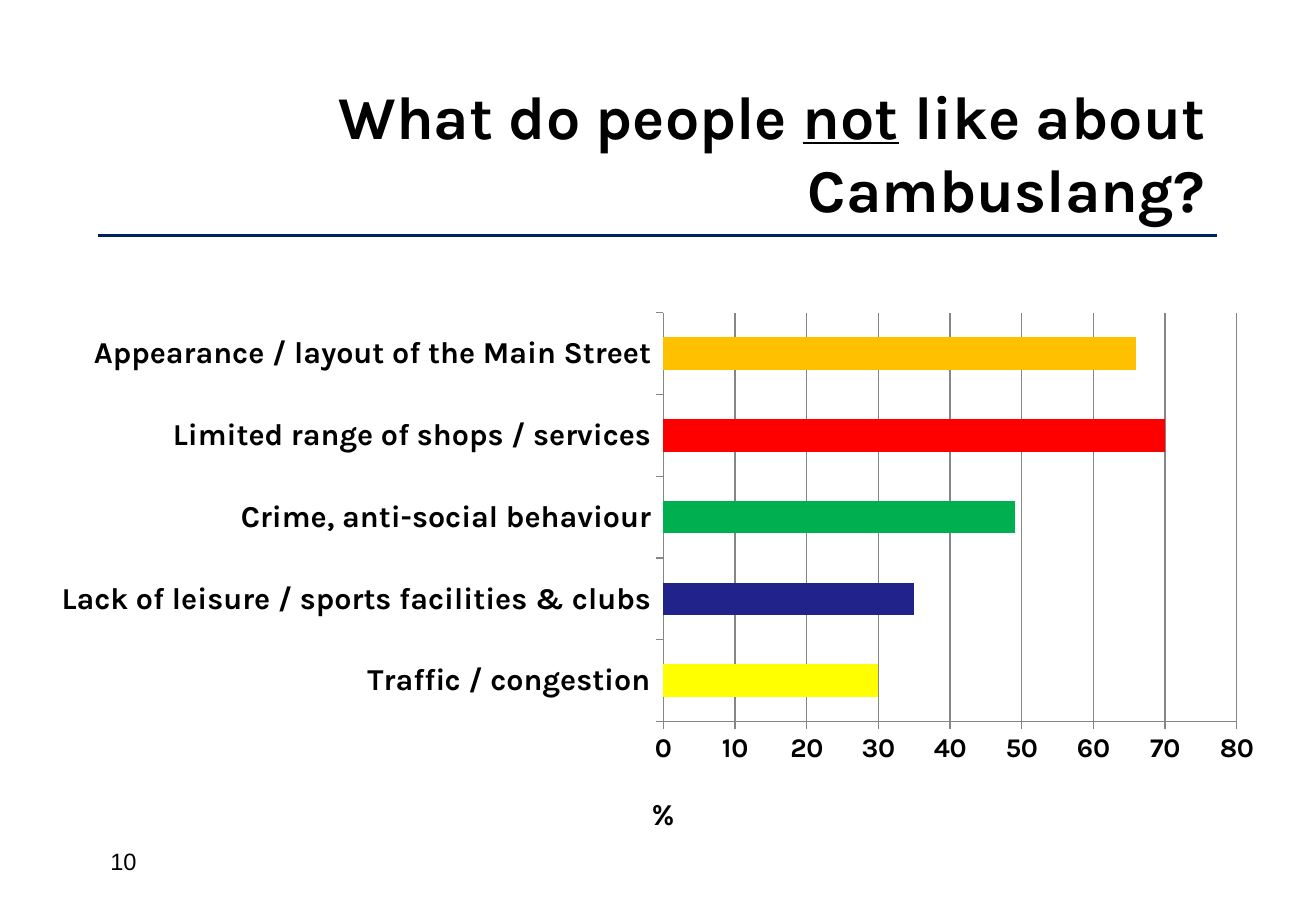
from dataclasses import dataclass
from typing import NamedTuple

from lxml.etree import SubElement
from pptx import Presentation
from pptx.chart.chart import Chart
from pptx.chart.data import CategoryChartData
from pptx.dml.color import RGBColor as Rgb
from pptx.enum.chart import XL_CHART_TYPE as ChartType, XL_TICK_MARK as TickMark
from pptx.enum.text import MSO_ANCHOR as Anchor, PP_ALIGN as Align
from pptx.oxml.ns import qn
from pptx.slide import Slide
from pptx.text.text import Font
from pptx.util import Pt


@dataclass(frozen=True)
class Theme:
    heading_font: str = "Karla"
    number_font: str = "Arial"
    text: str = "000000"
    rule: str = "002060"
    grid: str = "868686"
    title_size: int = 36
    label_size: int = 18
    scale_size: int = 16
    number_size: int = 14


class Box(NamedTuple):
    left: float
    top: float
    width: float
    height: float


class Run(NamedTuple):
    text: str
    underline: bool = False


class Dislike(NamedTuple):
    label: str
    percent: int
    color: str


THEME = Theme()
TITLE_BOX = Box(58.3, 41.8, 663.1, 95.8)
NUMBER_BOX = Box(58.3, 498.2, 64.8, 23.8)
CHART_BOX = Box(21.6, 179.3, 737.3, 324)
RULE_TOP = 139.7

TITLE = [Run("What do people "), Run("not", True), Run(" like about Cambuslang?")]
DISLIKES = [
    Dislike("Traffic / congestion", 30, "FFFF00"),
    Dislike("Lack of leisure / sports facilities & clubs", 35, "22228B"),
    Dislike("Crime, anti-social behaviour", 49, "00B050"),
    Dislike("Limited range of shops / services", 70, "FF0000"),
    Dislike("Appearance / layout of the Main Street", 66, "FFC000"),
]


def style_font(font: Font, name: str, size: int, bold: bool) -> None:
    font.name = name
    font.size = Pt(size)
    font.bold = bold
    font.color.rgb = Rgb.from_string(THEME.text)


def add_text(slide: Slide, box: Box, runs: list[Run], name: str, size: int,
             bold: bool, align: Align, anchor: Anchor) -> None:
    frame = slide.shapes.add_textbox(*map(Pt, box)).text_frame
    frame.word_wrap = True
    frame.vertical_anchor = anchor
    paragraph = frame.paragraphs[0]
    paragraph.alignment = align
    for item in runs:
        run = paragraph.add_run()
        run.text = item.text
        style_font(run.font, name, size, bold)
        if item.underline:
            run.font.underline = True


def add_rule(slide: Slide) -> None:
    right = TITLE_BOX.left + TITLE_BOX.width
    line = slide.shapes.add_connector(
        1, Pt(TITLE_BOX.left), Pt(RULE_TOP), Pt(right), Pt(RULE_TOP))
    line.line.color.rgb = Rgb.from_string(THEME.rule)
    line.line.width = Pt(2)
    SubElement(line._element.spPr, qn("a:effectLst"))


def place(element, index: int, **fractions: float) -> None:
    """Fix a chart part at fractions of the chart area."""
    for old in element.findall(qn("c:layout")):
        element.remove(old)
    layout = SubElement(element, qn("c:layout"))
    element.insert(index, layout)
    manual = SubElement(layout, qn("c:manualLayout"))
    settings = {"xMode": "edge", "yMode": "edge", **fractions}
    if "w" in fractions:
        settings = {"layoutTarget": "inner", **settings}
    for key, value in settings.items():
        SubElement(manual, qn(f"c:{key}")).set("val", str(value))


def style_axes(chart: Chart) -> None:
    grey = Rgb.from_string(THEME.grid)
    sizes = ((chart.category_axis, THEME.label_size), (chart.value_axis, THEME.scale_size))
    for axis, size in sizes:
        style_font(axis.tick_labels.font, THEME.heading_font, size, True)
        axis.major_tick_mark = TickMark.OUTSIDE
        axis.minor_tick_mark = TickMark.NONE
        axis.format.line.color.rgb = grey
        axis.format.line.width = Pt(0.75)

    scale = chart.value_axis
    scale.minimum_scale, scale.maximum_scale, scale.major_unit = 0, 80, 10
    scale.has_major_gridlines = True
    scale.major_gridlines.format.line.color.rgb = grey
    scale.major_gridlines.format.line.width = Pt(0.75)
    run = scale.axis_title.text_frame.paragraphs[0].add_run()
    run.text = "%"
    style_font(run.font, THEME.heading_font, THEME.label_size, True)
    place(scale.axis_title._element, 1, x=0.49, y=0.89)


def add_dislikes_chart(slide: Slide) -> None:
    data = CategoryChartData(number_format="0")
    data.categories = [item.label for item in DISLIKES]
    data.add_series("Series 1", [item.percent for item in DISLIKES])
    chart = slide.shapes.add_chart(
        ChartType.BAR_CLUSTERED, *map(Pt, CHART_BOX), data).chart
    chart.has_legend = False
    chart.has_title = False
    style_font(chart.font, THEME.heading_font, THEME.label_size, False)
    style_axes(chart)
    place(chart._chartSpace.chart.plotArea, 0, x=0.504, y=0.019, w=0.461, h=0.748)

    # One colour per bar
    plot = chart.plots[0]
    plot.gap_width = 150
    plot.vary_by_categories = False
    series = plot.series[0]
    series.invert_if_negative = False
    for index, item in enumerate(DISLIKES):
        fill = series.points[index].format.fill
        fill.solid()
        fill.fore_color.rgb = Rgb.from_string(item.color)


def main() -> None:
    presentation = Presentation()
    presentation.slide_width, presentation.slide_height = Pt(780), Pt(540)
    slide = presentation.slides.add_slide(presentation.slide_layouts[6])

    # Heading and rule
    add_rule(slide)
    add_text(slide, TITLE_BOX, TITLE, THEME.heading_font, THEME.title_size,
             True, Align.RIGHT, Anchor.MIDDLE)

    # Page number
    add_text(slide, NUMBER_BOX, [Run("10")], THEME.number_font, THEME.number_size,
             False, Align.LEFT, Anchor.TOP)

    # Survey answers
    add_dislikes_chart(slide)
    presentation.save("out.pptx")


if __name__ == "__main__":
    main()
